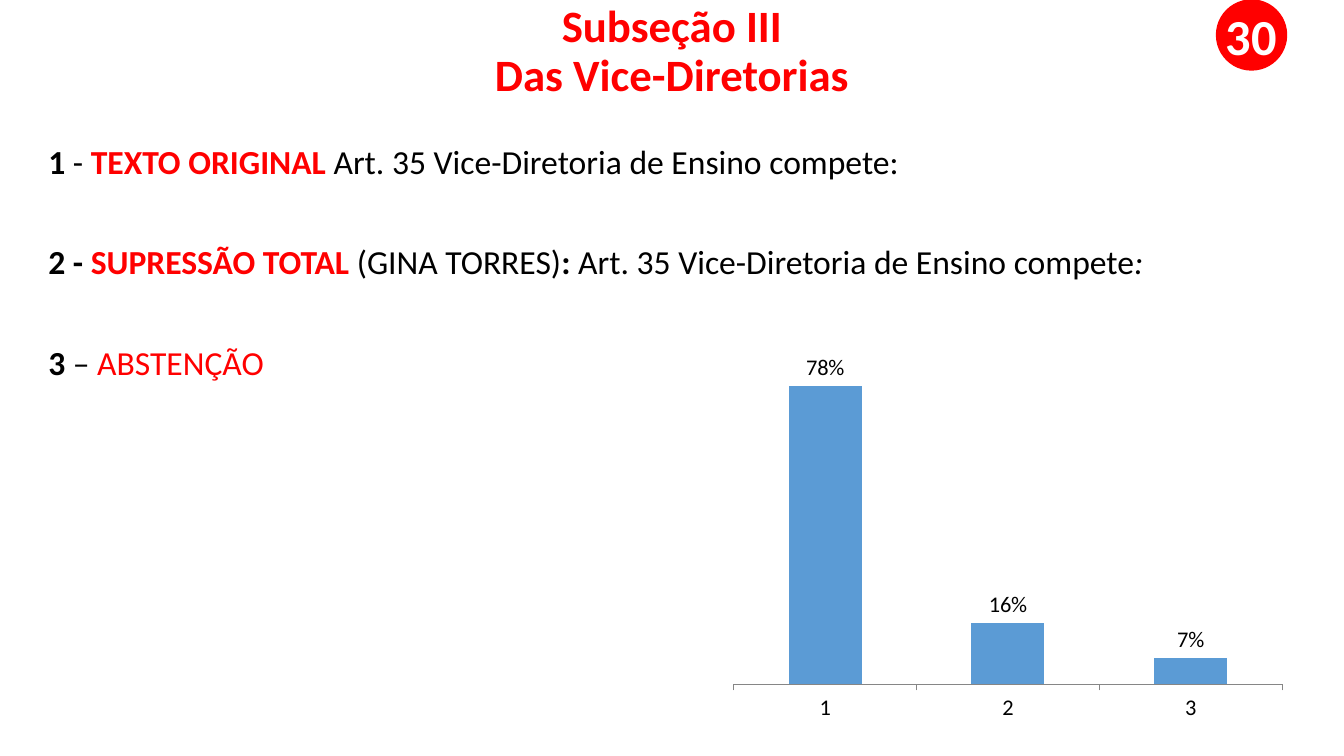
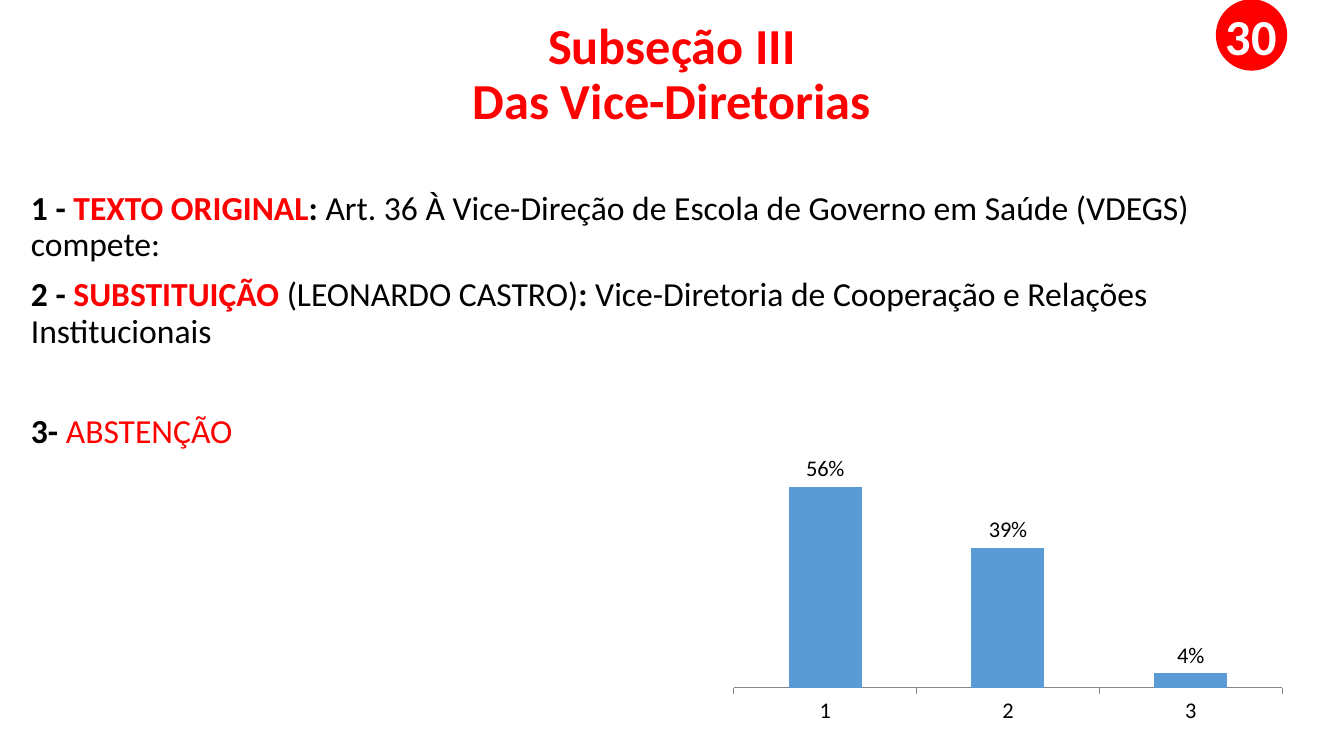
from dataclasses import dataclass

from lxml import etree
from pptx import Presentation
from pptx.chart.data import CategoryChartData
from pptx.dml.color import RGBColor
from pptx.enum.chart import XL_CHART_TYPE, XL_LABEL_POSITION, XL_TICK_MARK
from pptx.enum.shapes import MSO_SHAPE
from pptx.enum.text import MSO_ANCHOR, PP_ALIGN
from pptx.oxml import parse_xml
from pptx.util import Pt

COLUMNS = XL_CHART_TYPE.COLUMN_CLUSTERED
LABELS_ABOVE = XL_LABEL_POSITION.OUTSIDE_END
TICK_OUTSIDE, TICK_NONE = XL_TICK_MARK.OUTSIDE, XL_TICK_MARK.NONE
OVAL = MSO_SHAPE.OVAL
TOP, MIDDLE = MSO_ANCHOR.TOP, MSO_ANCHOR.MIDDLE
LEFT, CENTER = PP_ALIGN.LEFT, PP_ALIGN.CENTER
CHART_NAMESPACE = "http://schemas.openxmlformats.org/drawingml/2006/chart"


@dataclass(frozen=True)
class Theme:
    font: str = "Calibri"
    red: RGBColor = RGBColor(0xFF, 0x00, 0x00)
    black: RGBColor = RGBColor(0x00, 0x00, 0x00)
    white: RGBColor = RGBColor(0xFF, 0xFF, 0xFF)
    bar: RGBColor = RGBColor(0x5B, 0x9B, 0xD5)
    axis: RGBColor = RGBColor(0x86, 0x86, 0x86)
    body_size: int = 24
    badge_size: int = 36
    chart_size: int = 16
    line_spacing: float = 0.9
    gap: int = 10
    wide_gap: int = 46


THEME = Theme()

# Run styles: colour, bold, italic
PLAIN = (THEME.black, False, False)
BOLD = (THEME.black, True, False)
ITALIC = (THEME.black, False, True)
RED = (THEME.red, False, False)
RED_BOLD = (THEME.red, True, False)
WHITE_BOLD = (THEME.white, True, False)

TITLE_LINES = ["Subseção III", "Das Vice-Diretorias"]
BADGE_TEXT = "30"
CATEGORIES = ["1", "2", "3"]

# Boxes are left, top, width, height; options are (space before, runs);
# plot is the top and height of the plot area as shares of the chart
SLIDES = [
    {
        "title_size": 32,
        "title_box": (66, 0, 828, 75),
        "body_box": (27.4, 100, 867, 386),
        "options": [
            (0, [("1", BOLD), (" - ", PLAIN), ("TEXTO ORIGINAL ", RED_BOLD),
                 ("Art. 35 Vice-Diretoria de Ensino compete:", PLAIN)]),
            (THEME.wide_gap, [
                ("2 - ", BOLD), ("SUPRESSÃO TOTAL ", RED_BOLD),
                ("(GINA TORRES)", PLAIN), (":", BOLD),
                (" Art. 35 Vice-Diretoria de Ensino compete", PLAIN),
                (":", ITALIC)]),
            (THEME.wide_gap, [("3", BOLD), (" – ", PLAIN), ("ABSTENÇÃO", RED)]),
        ],
        "chart_box": (516, 237, 408, 283),
        "values": [0.78, 0.16, 0.07],
        "maximum": 0.9,
        "plot": (0.02, 0.87),
    },
    {
        "title_size": 36,
        "title_box": (66, 2, 828, 104),
        "body_box": (15, 133, 879, 353),
        "options": [
            (0, [("1 - ", BOLD), ("TEXTO ORIGINAL", RED_BOLD), (":", BOLD),
                 (" Art. 36 À Vice-Direção de Escola de Governo em Saúde "
                  "(VDEGS) compete:", PLAIN)]),
            (THEME.gap, [
                ("2 - ", BOLD), ("SUBSTITUIÇÃO ", RED_BOLD),
                ("(LEONARDO CASTRO)", PLAIN), (": ", BOLD),
                ("Vice-Diretoria de Cooperação e Relações Institucionais",
                 PLAIN)]),
            (THEME.wide_gap, [("3- ", BOLD), ("ABSTENÇÃO", RED)]),
        ],
        "chart_box": (516, 325.5, 408, 195),
        "values": [0.56, 0.39, 0.04],
        "maximum": 0.6,
        "plot": (0.06, 0.79),
    },
]


def add_run(paragraph, text, size, style):
    color, bold, italic = style
    run = paragraph.add_run()
    run.text = text
    run.font.name = THEME.font
    run.font.size = Pt(size)
    run.font.color.rgb = color
    run.font.bold = bold
    run.font.italic = italic


def add_text_frame(slide, box, anchor):
    text_frame = slide.shapes.add_textbox(*map(Pt, box)).text_frame
    text_frame.word_wrap = True
    text_frame.vertical_anchor = anchor
    return text_frame


presentation = Presentation()
presentation.slide_width = Pt(960)
presentation.slide_height = Pt(540)
blank_layout = presentation.slide_layouts[6]

for content in SLIDES:
    slide = presentation.slides.add_slide(blank_layout)

    # Title
    text_frame = add_text_frame(slide, content["title_box"], MIDDLE)
    text_frame.margin_top = text_frame.margin_bottom = Pt(0)
    paragraph = text_frame.paragraphs[0]
    paragraph.alignment = CENTER
    paragraph.line_spacing = THEME.line_spacing
    for index, line in enumerate(TITLE_LINES):
        if index:
            paragraph.add_line_break()
        add_run(paragraph, line, content["title_size"], RED_BOLD)

    # Voting options
    text_frame = add_text_frame(slide, content["body_box"], TOP)
    for index, (space_before, runs) in enumerate(content["options"]):
        paragraph = text_frame.add_paragraph() if index else text_frame.paragraphs[0]
        paragraph.alignment = LEFT
        paragraph.line_spacing = THEME.line_spacing
        paragraph.space_before = Pt(space_before)
        for text, style in runs:
            add_run(paragraph, text, THEME.body_size, style)

    # Vote chart
    chart_data = CategoryChartData(number_format="0%")
    chart_data.categories = CATEGORIES
    chart_data.add_series("Series 1", content["values"])
    chart = slide.shapes.add_chart(
        COLUMNS, *map(Pt, content["chart_box"]), chart_data).chart
    chart.has_legend = False
    chart.has_title = False
    chart.font.name = THEME.font
    chart.font.size = Pt(THEME.chart_size)
    chart.font.color.rgb = THEME.black

    value_axis = chart.value_axis
    value_axis.minimum_scale = 0
    value_axis.maximum_scale = content["maximum"]
    value_axis.has_major_gridlines = False
    value_axis.visible = False
    category_axis = chart.category_axis
    category_axis.major_tick_mark = TICK_OUTSIDE
    category_axis.minor_tick_mark = TICK_NONE
    category_axis.format.line.color.rgb = THEME.axis
    category_axis.format.line.width = Pt(0.75)

    plot = chart.plots[0]
    plot.gap_width = 150
    plot.vary_by_categories = False
    fill = plot.series[0].format.fill
    fill.solid()
    fill.fore_color.rgb = THEME.bar
    plot.has_data_labels = True
    labels = plot.data_labels
    labels.show_value = True
    labels.number_format = "0%"
    labels.number_format_is_linked = False
    labels.position = LABELS_ABOVE

    # Fixed plot area inside the chart
    plot_top, plot_height = content["plot"]
    layout = parse_xml(f'<c:layout xmlns:c="{CHART_NAMESPACE}"><c:manualLayout/></c:layout>')
    settings = [("layoutTarget", "inner"), ("xMode", "edge"), ("yMode", "edge"),
                ("x", 0.02), ("y", plot_top), ("w", 0.96), ("h", plot_height)]
    for name, value in settings:
        etree.SubElement(layout[0], f"{{{CHART_NAMESPACE}}}{name}", val=str(value))
    plot_area = chart.element.chart.plotArea
    for old_layout in plot_area.findall(f"{{{CHART_NAMESPACE}}}layout"):
        plot_area.remove(old_layout)
    plot_area.insert(0, layout)

    # Number badge
    badge = slide.shapes.add_shape(OVAL, Pt(869), Pt(0), Pt(50), Pt(50))
    badge.shadow.inherit = False
    badge.fill.solid()
    badge.fill.fore_color.rgb = THEME.red
    badge.line.color.rgb = THEME.red
    badge.line.width = Pt(1)
    text_frame = badge.text_frame
    text_frame.word_wrap = False
    text_frame.vertical_anchor = MIDDLE
    text_frame.margin_left = text_frame.margin_right = Pt(0)
    text_frame.margin_top = text_frame.margin_bottom = Pt(0)
    paragraph = text_frame.paragraphs[0]
    paragraph.alignment = CENTER
    add_run(paragraph, BADGE_TEXT, THEME.badge_size, WHITE_BOLD)

presentation.save("out.pptx")
